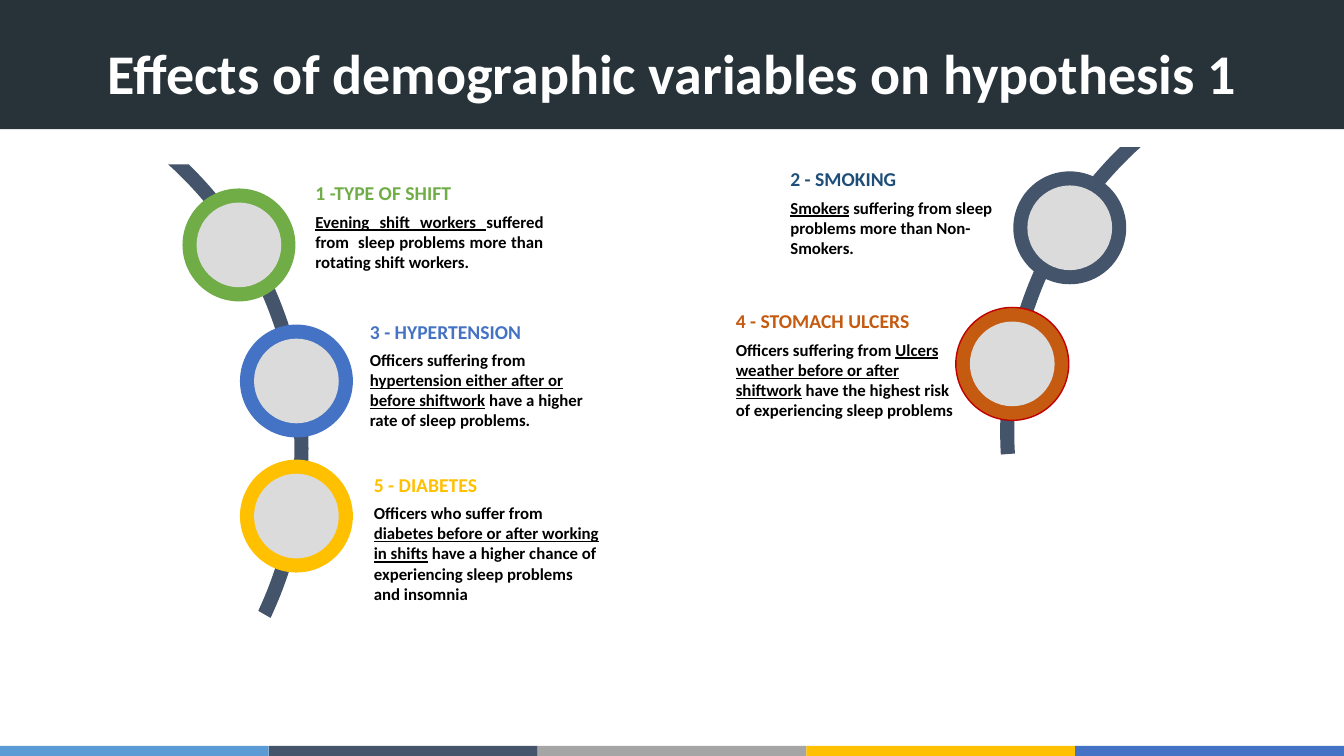
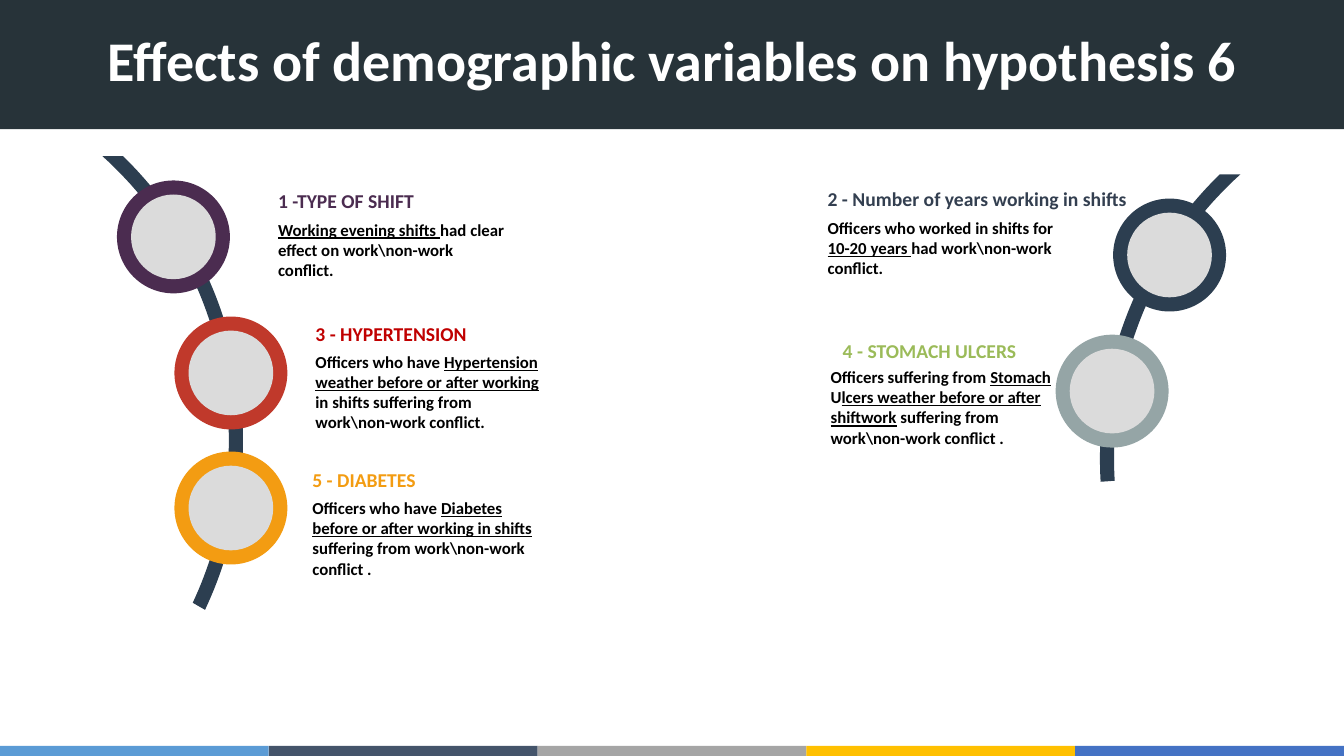
from dataclasses import dataclass
from math import sqrt

from pptx import Presentation
from pptx.dml.color import RGBColor
from pptx.enum.shapes import MSO_SHAPE
from pptx.enum.text import MSO_AUTO_SIZE, PP_ALIGN
from pptx.shapes.base import BaseShape
from pptx.slide import Slide, SlideLayout
from pptx.text.text import _Paragraph as Paragraph
from pptx.util import Inches, Pt

RECTANGLE = MSO_SHAPE.RECTANGLE
OVAL = MSO_SHAPE.OVAL
GROW = MSO_AUTO_SIZE.SHAPE_TO_FIT_TEXT
LEFT, CENTER, JUSTIFY = PP_ALIGN.LEFT, PP_ALIGN.CENTER, PP_ALIGN.JUSTIFY

FONT = "Calibri"
COLORS = {
    "white": "FFFFFF", "black": "000000", "header": "273339", "disc": "DBDBDB",
    "sky": "5B9BD5", "slate": "44546A", "gray": "A5A5A5", "gold": "FFC000",
    "blue": "4472C4", "green": "70AD47", "navy": "1F4E79", "rust": "C55A11",
    "red": "C00000", "midnight": "2C3E50", "plum": "4B2C50", "brick": "C0392B",
    "amber": "F39C12", "ash": "95A5A6", "ink": "333F50", "lime": "9BBB59",
}
FOOTER_COLORS = ("sky", "slate", "gray", "gold", "blue")
SLIDE_WIDTH, SLIDE_HEIGHT = 13.33, 7.5
FOOTER_HEIGHT = 0.1
RING_SIZE, DISC_SIZE = 1.12, 0.84
RING_CENTERS = ((0.69, 0.8), (1.26, 2.15), (1.26, 3.49))
ARC_X, ARC_Y = -2.56, 2.82
OUTER_RADIUS, INNER_RADIUS = 3.94, 3.8
ARC_STEPS = 8


@dataclass(frozen=True)
class ArcPiece:
    outer_top: float
    outer_bottom: float
    inner_top: float
    inner_bottom: float


@dataclass(frozen=True)
class Ring:
    color: str
    outline: str | None = None


@dataclass(frozen=True)
class Chain:
    left: float
    top: float
    direction: int
    pieces: int
    rings: tuple[Ring, ...]


@dataclass(frozen=True)
class Topic:
    left: float
    top: float
    heading_width: float
    heading: str
    color: str
    body_width: float
    body_height: float
    body: str
    alignment: PP_ALIGN = LEFT
    body_shift: tuple[float, float] = (0, 0.3)


@dataclass(frozen=True)
class Page:
    title: str
    title_top: float
    arc_color: str
    chains: tuple[Chain, ...]
    topics: tuple[Topic, ...]


ARC_PIECES = (
    ArcPiece(0, 0.37, 0, 0.44),
    ArcPiece(1.14, 1.69, 1.21, 1.72),
    ArcPiece(2.59, 3.05, 2.6, 3.04),
    ArcPiece(3.95, 4.5, 3.92, 4.43),
)

PAGES = (
    Page(
        "Effects of demographic variables on hypothesis 1", 0.33, "slate",
        (
            Chain(1.68, 1.63, 1, 4, (Ring("green"), Ring("blue"), Ring("gold"))),
            Chain(11.3, 1.46, -1, 3, (Ring("slate"), Ring("rust", "red"))),
        ),
        (
            Topic(3.03, 1.75, 1.57, "1 -TYPE OF SHIFT", "green", 2.46, 0.91,
                  "|Evening shift workers |suffered from  sleep problems more than "
                  "rotating shift workers.", JUSTIFY),
            Topic(7.74, 1.61, 1.26, "2 - SMOKING", "navy", 2.52, 0.71,
                  "|Smokers| suffering from sleep problems more than Non-Smokers."),
            Topic(3.57, 3.12, 1.72, "3 - HYPERTENSION", "blue", 2.52, 0.91,
                  "Officers suffering from |hypertension either after or before shiftwork"
                  "| have a higher rate of sleep problems."),
            Topic(7.2, 3.02, 1.93, "4 - STOMACH ULCERS", "rust", 2.46, 1.06,
                  "Officers suffering from |Ulcers weather before or after shiftwork"
                  "| have the highest risk of experiencing sleep problems"),
            Topic(3.61, 4.64, 1.24, "5 - DIABETES", "gold", 2.46, 1.26,
                  "Officers who suffer from |diabetes before or after working in shifts"
                  "| have a higher chance of experiencing sleep problems and insomnia"),
        ),
    ),
    Page(
        "Effects of demographic variables on hypothesis 6", 0.2, "midnight",
        (
            Chain(1.03, 1.55, 1, 4, (Ring("plum"), Ring("brick"), Ring("amber"))),
            Chain(12.29, 1.73, -1, 3, (Ring("midnight"), Ring("ash"))),
        ),
        (
            Topic(2.66, 1.83, 1.57, "1 -TYPE OF SHIFT", "plum", 2.46, 0.91,
                  "|Working evening shifts |had clear effect on work\\non-work conflict."),
            Topic(8.11, 1.81, 3.29, "2 - Number of years working in shifts", "ink", 2.52, 0.71,
                  "Officers who worked in shifts for |10-20 years "
                  "|had work\\non-work conflict."),
            Topic(3.03, 3.14, 1.72, "3 - HYPERTENSION", "red", 2.52, 0.91,
                  "Officers who have |Hypertension| |weather before or after working"
                  "| in shifts suffering from work\\non-work conflict."),
            Topic(8.26, 3.31, 1.95, "4 - STOMACH ULCERS", "lime", 2.46, 1.26,
                  "Officers suffering from |Stomach| U|lcers weather before or after shiftwork"
                  "| suffering from work\\non-work conflict .", body_shift=(-0.12, 0.28)),
            Topic(3, 4.59, 1.24, "5 - DIABETES", "amber", 2.46, 0.91,
                  "Officers who have |Diabetes before or after working in shifts"
                  "| suffering from work\\non-work conflict ."),
        ),
    ),
)


def rgb(color: str) -> RGBColor:
    return RGBColor.from_string(COLORS[color])


def paint(shape: BaseShape, color: str, outline: str | None = None) -> None:
    shape.shadow.inherit = False
    shape.fill.solid()
    shape.fill.fore_color.rgb = rgb(color)
    if outline:
        shape.line.color.rgb = rgb(outline)
        shape.line.width = Pt(1)
    else:
        shape.line.fill.background()


def add_block(slide: Slide, kind: MSO_SHAPE, left: float, top: float, width: float,
              height: float, color: str, outline: str | None = None) -> BaseShape:
    shape = slide.shapes.add_shape(
        kind, Inches(left), Inches(top), Inches(width), Inches(height))
    paint(shape, color, outline)
    return shape


def add_circle(slide: Slide, center_x: float, center_y: float, size: float,
               color: str, outline: str | None = None) -> None:
    add_block(slide, OVAL, center_x - size / 2, center_y - size / 2,
              size, size, color, outline)


def add_text(slide: Slide, left: float, top: float, width: float, height: float,
             size: int, color: str, alignment: PP_ALIGN = LEFT, wrap: bool = True) -> Paragraph:
    frame = slide.shapes.add_textbox(
        Inches(left), Inches(top), Inches(width), Inches(height)).text_frame
    frame.word_wrap = wrap
    frame.auto_size = GROW
    paragraph = frame.paragraphs[0]
    paragraph.alignment = alignment
    paragraph.font.name = FONT
    paragraph.font.size = Pt(size)
    paragraph.font.bold = True
    paragraph.font.color.rgb = rgb(color)
    return paragraph


def arc_points(radius: float, start: float, end: float) -> list[tuple[float, float]]:
    heights = [start + (end - start) * step / ARC_STEPS for step in range(ARC_STEPS + 1)]
    return [(ARC_X + sqrt(radius ** 2 - (y - ARC_Y) ** 2), y) for y in heights]


def add_arc_piece(slide: Slide, chain: Chain, piece: ArcPiece, color: str) -> None:
    outline = arc_points(OUTER_RADIUS, piece.outer_top, piece.outer_bottom)
    outline += arc_points(INNER_RADIUS, piece.inner_bottom, piece.inner_top)
    points = [(Inches(chain.left + chain.direction * x), Inches(chain.top + y))
              for x, y in outline]
    builder = slide.shapes.build_freeform(*points[0])
    builder.add_line_segments(points[1:], close=True)
    paint(builder.convert_to_shape(), color)


def add_chain(slide: Slide, chain: Chain, arc_color: str) -> None:
    for piece in ARC_PIECES[:chain.pieces]:
        add_arc_piece(slide, chain, piece, arc_color)
    for ring, (x, y) in zip(chain.rings, RING_CENTERS):
        center = chain.left + chain.direction * x, chain.top + y
        add_circle(slide, *center, RING_SIZE, ring.color, ring.outline)
        add_circle(slide, *center, DISC_SIZE, "disc")


def add_topic(slide: Slide, topic: Topic) -> None:
    heading = add_text(slide, topic.left, topic.top, topic.heading_width, 0.34,
                       14, topic.color, wrap=False)
    heading.add_run().text = topic.heading
    shift_x, shift_y = topic.body_shift
    body = add_text(slide, topic.left + shift_x, topic.top + shift_y,
                    topic.body_width, topic.body_height, 12, "black", topic.alignment)
    for index, part in enumerate(topic.body.split("|")):
        if part:
            run = body.add_run()
            run.text = part
            if index % 2:
                run.font.underline = True


def move_bands_to_layout(slide: Slide, layout: SlideLayout) -> None:
    for placeholder in list(layout.placeholders):
        placeholder.element.getparent().remove(placeholder.element)
    width = SLIDE_WIDTH / len(FOOTER_COLORS)
    bands = [
        add_block(slide, RECTANGLE, index * width, SLIDE_HEIGHT - FOOTER_HEIGHT,
                  width, FOOTER_HEIGHT, color)
        for index, color in enumerate(FOOTER_COLORS)
    ]
    bands.append(add_block(slide, RECTANGLE, 0, -0.01, SLIDE_WIDTH, 1.29, "header"))
    for band in bands:
        layout.element.cSld.spTree.append(band.element)


def add_page(slide: Slide, page: Page) -> None:
    for chain in page.chains:
        add_chain(slide, chain, page.arc_color)
    for topic in page.topics:
        add_topic(slide, topic)
    title = add_text(slide, 0, page.title_top, SLIDE_WIDTH, 0.77, 40, "white", CENTER)
    title.add_run().text = page.title


def main() -> None:
    presentation = Presentation()
    presentation.slide_width = Inches(SLIDE_WIDTH)
    presentation.slide_height = Inches(SLIDE_HEIGHT)
    layout = presentation.slide_layouts[6]
    slides = [presentation.slides.add_slide(layout) for _ in PAGES]
    move_bands_to_layout(slides[0], layout)
    for slide, page in zip(slides, PAGES):
        add_page(slide, page)
    presentation.save("out.pptx")


if __name__ == "__main__":
    main()
